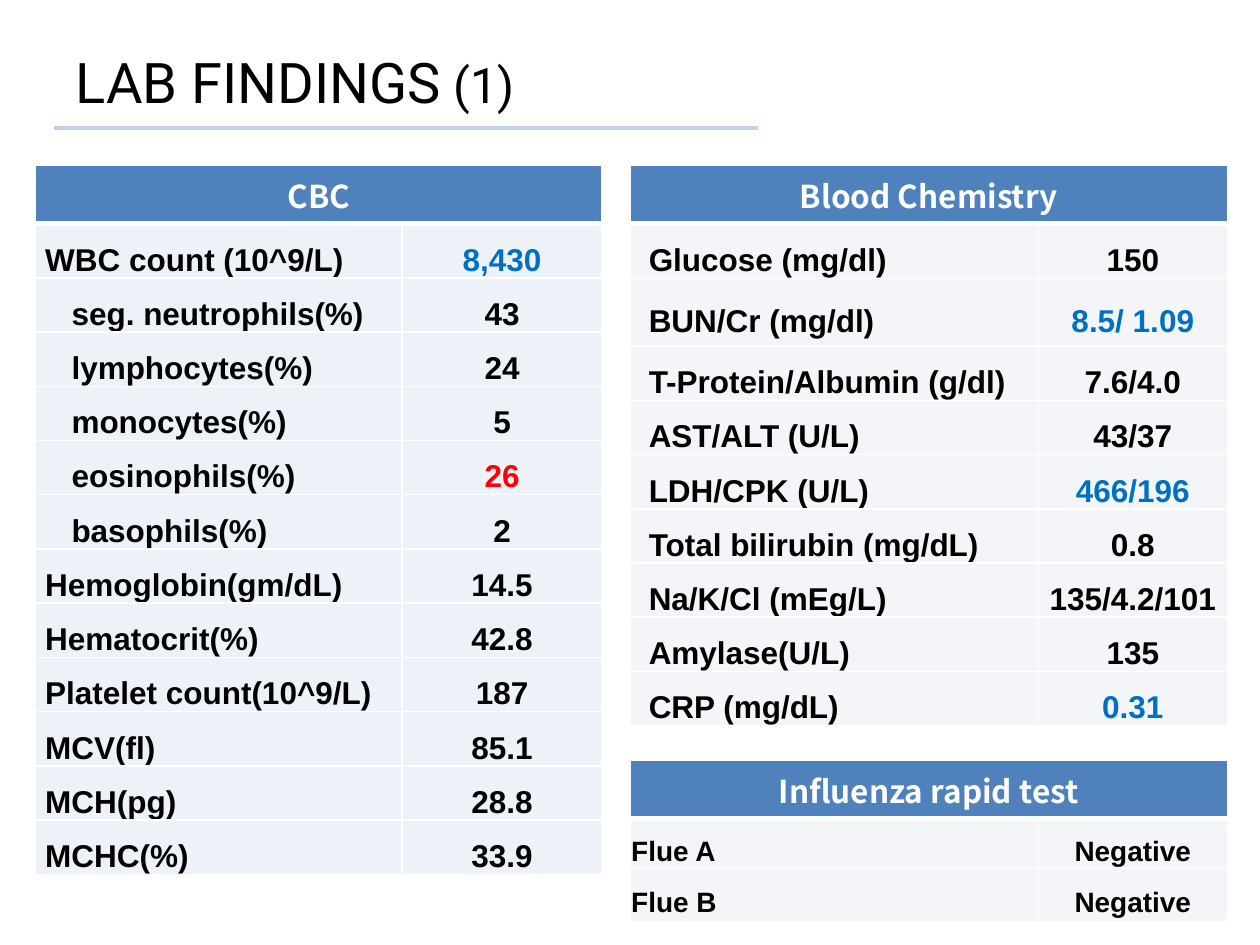
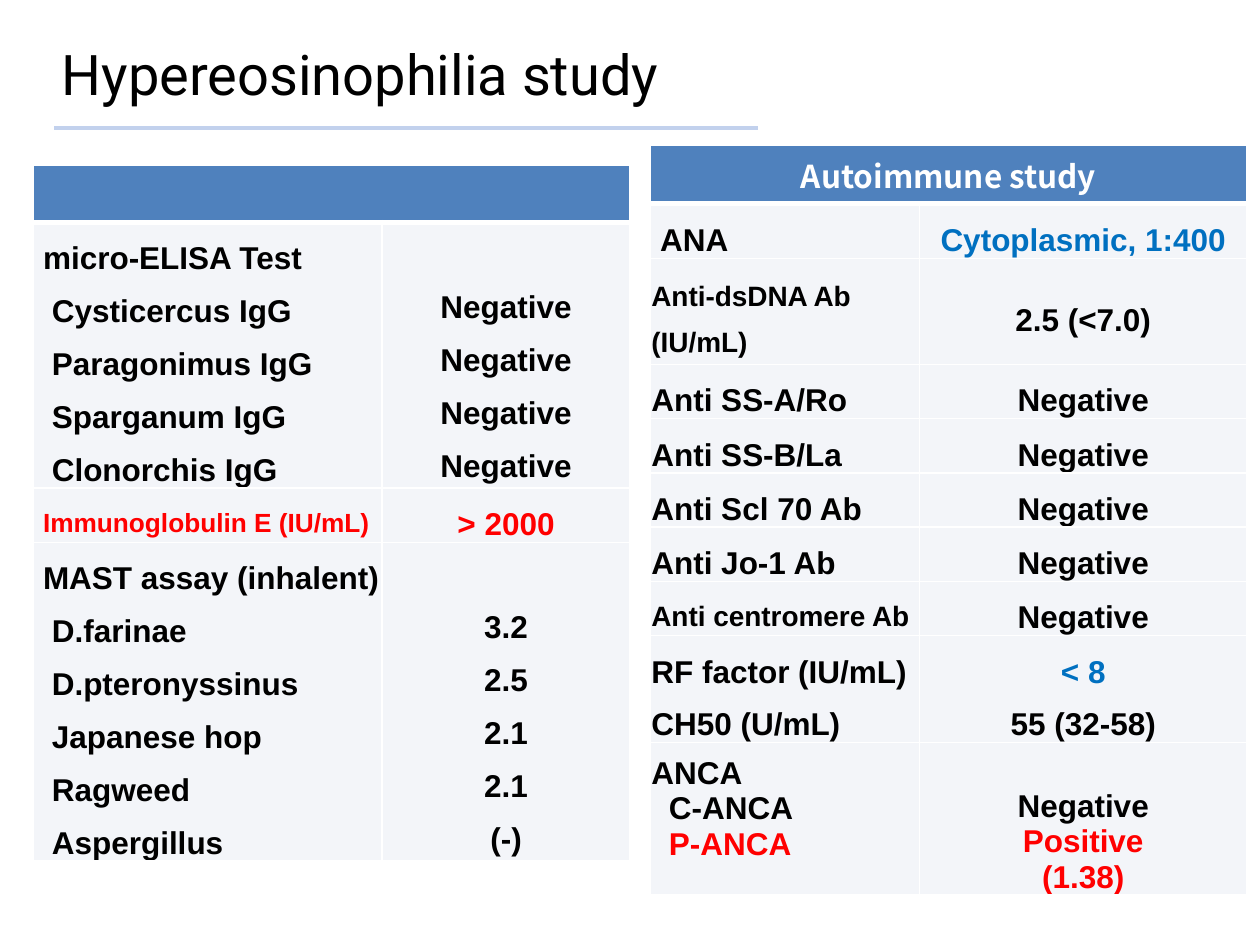
"""Build two slides of laboratory result tables."""
from dataclasses import dataclass

import pptx
import pptx.dml.color
import pptx.enum.shapes
import pptx.enum.text
import pptx.oxml
import pptx.oxml.ns
import pptx.presentation
import pptx.shapes.connector
import pptx.slide
import pptx.table
import pptx.util

Pt = pptx.util.Pt
Anchor = pptx.enum.text.MSO_ANCHOR
Align = pptx.enum.text.PP_ALIGN


@dataclass(frozen=True)
class Theme:
    title_font: str = "Roboto"
    header_font: str = "Noto Sans CJK KR"
    body_font: str = "Arial"
    black: str = "000000"
    white: str = "FFFFFF"
    blue: str = "0070C0"
    red: str = "FF0000"
    header: str = "4F81BD"
    rule: str = "C2D1ED"
    title_size: float = 32
    title_small: float = 28
    body_size: float = 18
    compact_size: float = 16
    small_size: float = 15
    inset: float = 0.72
    header_height: float = 32.5
    row_height: float = 31
    line_spacing: float = 1.5


THEME = Theme()


@dataclass(frozen=True)
class Line:
    text: str
    color: str = THEME.black
    size: float = THEME.body_size
    indent: float = 0


@dataclass(frozen=True)
class Row:
    labels: tuple[Line, ...]
    values: tuple[Line, ...]
    height: float = THEME.row_height
    spacing: float = THEME.line_spacing
    value_anchor: Anchor = Anchor.MIDDLE
    label_bottom: float = 0
    value_bottom: float = 0


@dataclass(frozen=True)
class ResultTable:
    heading: str
    left: float
    top: float
    widths: tuple[float, float]
    rows: tuple[Row, ...]
    fill: str = "E9EDF4"
    opacity: int = 51


@dataclass(frozen=True)
class Page:
    title: tuple[tuple[str, float], ...]
    title_box: tuple[float, float, float, float]
    tables: tuple[ResultTable, ...]


def result(label: str, value: str, color: str = THEME.black, indent: float = 0,
           size: float = THEME.body_size, value_size: float = THEME.body_size,
           height: float = THEME.row_height) -> Row:
    """Return a row holding one label and one value."""
    return Row((Line(label, size=size, indent=indent),),
               (Line(value, color, value_size),), height)


def panel(heading: str, members: dict[str, str], height: float) -> Row:
    """Return a row with a heading above indented tests and their values."""
    labels = (Line(heading, indent=5), *(Line(name, indent=10) for name in members))
    return Row(labels, tuple(Line(value) for value in members.values()), height,
               value_anchor=Anchor.BOTTOM, value_bottom=2.3)


CBC = ResultTable("CBC", 20.16, 94.5, (209.5, 114.5), (
    result("WBC count (10^9/L)", "8,430", THEME.blue, 5),
    result("seg. neutrophils(%)", "43", indent=20),
    result("lymphocytes(%)", "24", indent=20),
    result("monocytes(%)", "5", indent=20),
    result("eosinophils(%)", "26", THEME.red, 20),
    result("basophils(%)", "2", indent=20),
    result("Hemoglobin(gm/dL)", "14.5", indent=5),
    result("Hematocrit(%)", "42.8", indent=5),
    result("Platelet count(10^9/L)", "187", indent=5),
    result("MCV(fl)", "85.1", indent=5),
    result("MCH(pg)", "28.8", indent=5),
    result("MCHC(%)", "33.9", indent=5),
), fill="DCE6F2", opacity=49)

CHEMISTRY = ResultTable("Blood Chemistry", 360, 94.5, (233.3, 108), (
    result("Glucose (mg/dl)", "150", indent=10, height=31.5),
    result("BUN/Cr (mg/dl)", "8.5/ 1.09", THEME.blue, 10, height=38.5),
    result("T-Protein/Albumin (g/dl)", "7.6/4.0", indent=10),
    result("AST/ALT (U/L)", "43/37", indent=10),
    result("LDH/CPK (U/L)", "466/196", THEME.blue, 10),
    result("Total bilirubin (mg/dL)", "0.8", indent=10),
    result("Na/K/Cl (mEg/L)", "135/4.2/101", indent=10),
    result("Amylase(U/L)", "135", indent=10),
    result("CRP (mg/dL)", "0.31", THEME.blue, 10),
))

INFLUENZA = ResultTable("Influenza rapid test", 360, 434.5, (233.3, 108), tuple(
    result(name, "Negative", size=THEME.compact_size,
           value_size=THEME.compact_size, height=height)
    for name, height in (("Flue A", 28), ("Flue B", 31))
))

PARASITE_ALLERGY = ResultTable("", 18.9, 94.5, (199.4, 141.8), (
    panel("micro-ELISA Test", {
        "Cysticercus IgG": "Negative", "Paragonimus IgG": "Negative",
        "Sparganum IgG": "Negative", "Clonorchis IgG": "Negative"}, 152),
    Row((Line("Immunoglobulin E (IU/mL)", THEME.red, THEME.small_size, 5),),
        (Line("> 2000", THEME.red),)),
    panel("MAST assay (inhalent)", {
        "D.farinae": "3.2", "D.pteronyssinus": "2.5", "Japanese hop": "2.1",
        "Ragweed": "2.1", "Aspergillus": "(-)"}, 182),
))

AUTOIMMUNE = ResultTable("Autoimmune study", 371.5, 83, (154, 187), (
    result("ANA", "Cytoplasmic, 1:400", THEME.blue, 5, height=31.5),
    result("Anti-dsDNA Ab (IU/mL)", "2.5 (<7.0)", size=THEME.compact_size, height=60.5),
    *(result(name, "Negative") for name in
      ("Anti SS-A/Ro", "Anti SS-B/La", "Anti Scl 70 Ab", "Anti Jo-1 Ab")),
    result("Anti centromere Ab", "Negative", size=THEME.compact_size),
    Row((Line("RF factor (IU/mL)"), Line("CH50 (U/mL)")),
        (Line("< 8", THEME.blue), Line("55 (32-58)")), 61),
    Row((Line("ANCA"), Line("C-ANCA", indent=10), Line("P-ANCA", THEME.red, indent=10)),
        (Line("Negative"), Line("Positive", THEME.red), Line("(1.38)", THEME.red)),
        87, 1, Anchor.BOTTOM, label_bottom=12),
))

PAGES = (
    Page((("LAB FINDINGS", THEME.title_size), (" (1)", THEME.title_small)),
         (36, 21.6, 648, 49.7), (CBC, CHEMISTRY, INFLUENZA)),
    Page((("Hypereosinophilia study", THEME.title_size),),
         (28, 16.6, 410.4, 50.4), (PARASITE_ALLERGY, AUTOIMMUNE)),
)


def rgb(color: str) -> pptx.dml.color.RGBColor:
    """Return a colour object for a hexadecimal colour."""
    return pptx.dml.color.RGBColor.from_string(color)


def style_font(font: pptx.text.text.Font, name: str, size: float,
               color: str, bold: bool) -> None:
    """Set the face, size, colour and weight of a font."""
    font.name, font.size, font.bold = name, Pt(size), bold
    font.color.rgb = rgb(color)


def paint_cell(cell: pptx.table._Cell, fill: str, opacity: int = 100,
               top: float = 1, bottom: float = 1) -> None:
    """Give a cell white borders and a fill."""
    properties = cell._tc.get_or_add_tcPr()
    for side, width in (("L", 1), ("R", 1), ("T", top), ("B", bottom)):
        properties.append(pptx.oxml.parse_xml(
            f'<a:ln{side} {pptx.oxml.ns.nsdecls("a")} w="{Pt(width)}"><a:solidFill>'
            f'<a:srgbClr val="{THEME.white}"/></a:solidFill></a:ln{side}>'))
    cell.fill.solid()
    cell.fill.fore_color.rgb = rgb(fill)
    if opacity < 100:
        color = properties.find(".//" + pptx.oxml.ns.qn("a:solidFill") + "[last()]")
        color = properties.findall(pptx.oxml.ns.qn("a:solidFill"))[0][0]
        alpha = pptx.oxml.parse_xml(
            f'<a:alpha {pptx.oxml.ns.nsdecls("a")} val="{opacity * 1000}"/>')
        color.append(alpha)


def write_lines(cell: pptx.table._Cell, lines: tuple[Line, ...], alignment: Align,
                spacing: float, anchor: Anchor, bottom: float) -> None:
    """Fill a result cell with formatted paragraphs."""
    cell.margin_left = cell.margin_right = cell.margin_top = Pt(THEME.inset)
    cell.margin_bottom = Pt(bottom)
    cell.vertical_anchor = anchor
    cell.text_frame.text = "\n".join(line.text for line in lines)
    for paragraph, line in zip(cell.text_frame.paragraphs, lines):
        paragraph.alignment = alignment
        paragraph.line_spacing = spacing
        if line.indent:
            paragraph._p.get_or_add_pPr().set("marL", str(Pt(line.indent)))
        for run in paragraph.runs:
            style_font(run.font, THEME.body_font, line.size, line.color, True)


def draw_table(slide: pptx.slide.Slide, spec_table: ResultTable) -> None:
    """Draw a result table with a merged heading row."""
    heights = [THEME.header_height, *(row.height for row in spec_table.rows)]
    table = slide.shapes.add_table(
        len(heights), 2, Pt(spec_table.left), Pt(spec_table.top),
        Pt(sum(spec_table.widths)), Pt(sum(heights))).table
    table.first_row = table.horz_banding = False
    for column, width in zip(table.columns, spec_table.widths):
        column.width = Pt(width)
    for table_row, height in zip(table.rows, heights):
        table_row.height = Pt(height)
    heading = table.cell(0, 0)
    heading.merge(table.cell(0, 1))
    for column in range(2):
        paint_cell(table.cell(0, column), THEME.header, bottom=3)
    heading.text_frame.text = spec_table.heading
    paragraph = heading.text_frame.paragraphs[0]
    paragraph.alignment = Align.CENTER
    for run in paragraph.runs:
        style_font(run.font, THEME.header_font, THEME.body_size, THEME.white, True)
    for index, row in enumerate(spec_table.rows, 1):
        label, value = table.cell(index, 0), table.cell(index, 1)
        for cell in (label, value):
            paint_cell(cell, spec_table.fill, spec_table.opacity, top=3 if index == 1 else 1)
        write_lines(label, row.labels, Align.LEFT, row.spacing, Anchor.MIDDLE,
                    row.label_bottom)
        write_lines(value, row.values, Align.CENTER, row.spacing, row.value_anchor,
                    row.value_bottom)


def draw_title(slide: pptx.slide.Slide, page: Page) -> None:
    """Place and format the slide title."""
    title = slide.shapes.title
    title.left, title.top, title.width, title.height = map(Pt, page.title_box)
    title.text_frame.auto_size = pptx.enum.text.MSO_AUTO_SIZE.NONE
    title.text_frame.vertical_anchor = Anchor.MIDDLE
    paragraph = title.text_frame.paragraphs[0]
    paragraph.alignment = Align.LEFT
    for text, size in page.title:
        run = paragraph.add_run()
        run.text = text
        style_font(run.font, THEME.title_font, size, THEME.black, False)


def add_title_rule(slide: pptx.slide.Slide) -> None:
    """Put the rule under the title on the shared layout."""
    rule = slide.shapes.add_connector(
        pptx.enum.shapes.MSO_CONNECTOR.STRAIGHT, Pt(31), Pt(73.4), Pt(433.4), Pt(73.4))
    rule.line.color.rgb = rgb(THEME.rule)
    rule.line.width = Pt(2.25)
    rule.element.spPr.append(
        pptx.oxml.parse_xml(f'<a:effectLst {pptx.oxml.ns.nsdecls("a")}/>'))
    rule.element.xpath(".//p:cNvPr")[0].set("id", "100")
    slide.slide_layout.shapes.element.append(rule.element)


def main() -> None:
    """Build and save the presentation."""
    presentation = pptx.Presentation()
    presentation.slide_width, presentation.slide_height = Pt(720), Pt(540)
    layout = presentation.slide_layouts[5]
    for number, page in enumerate(PAGES):
        slide = presentation.slides.add_slide(layout)
        if number == 0:
            add_title_rule(slide)
        draw_title(slide, page)
        for result_table in page.tables:
            draw_table(slide, result_table)
    presentation.save("out.pptx")


if __name__ == "__main__":
    main()
